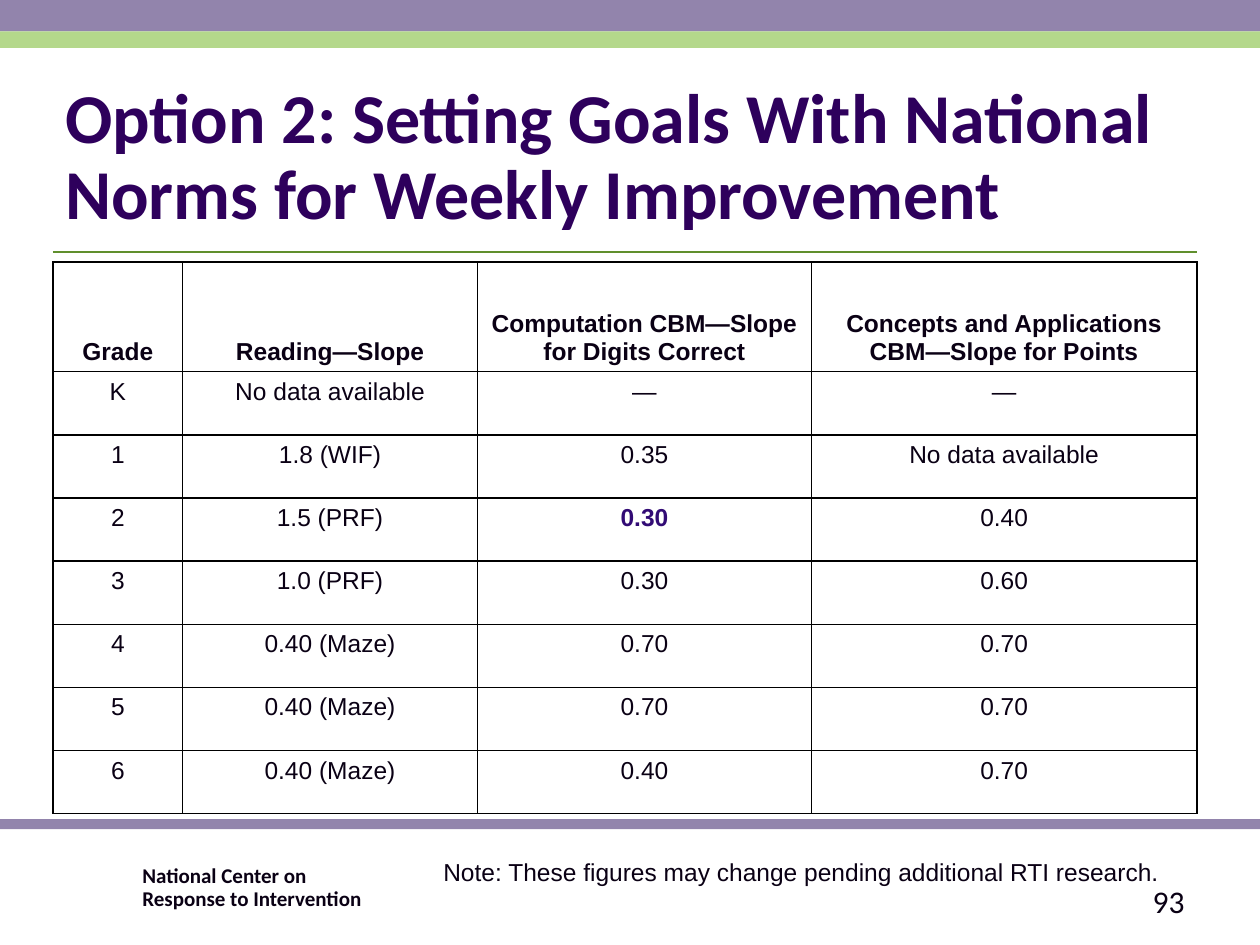
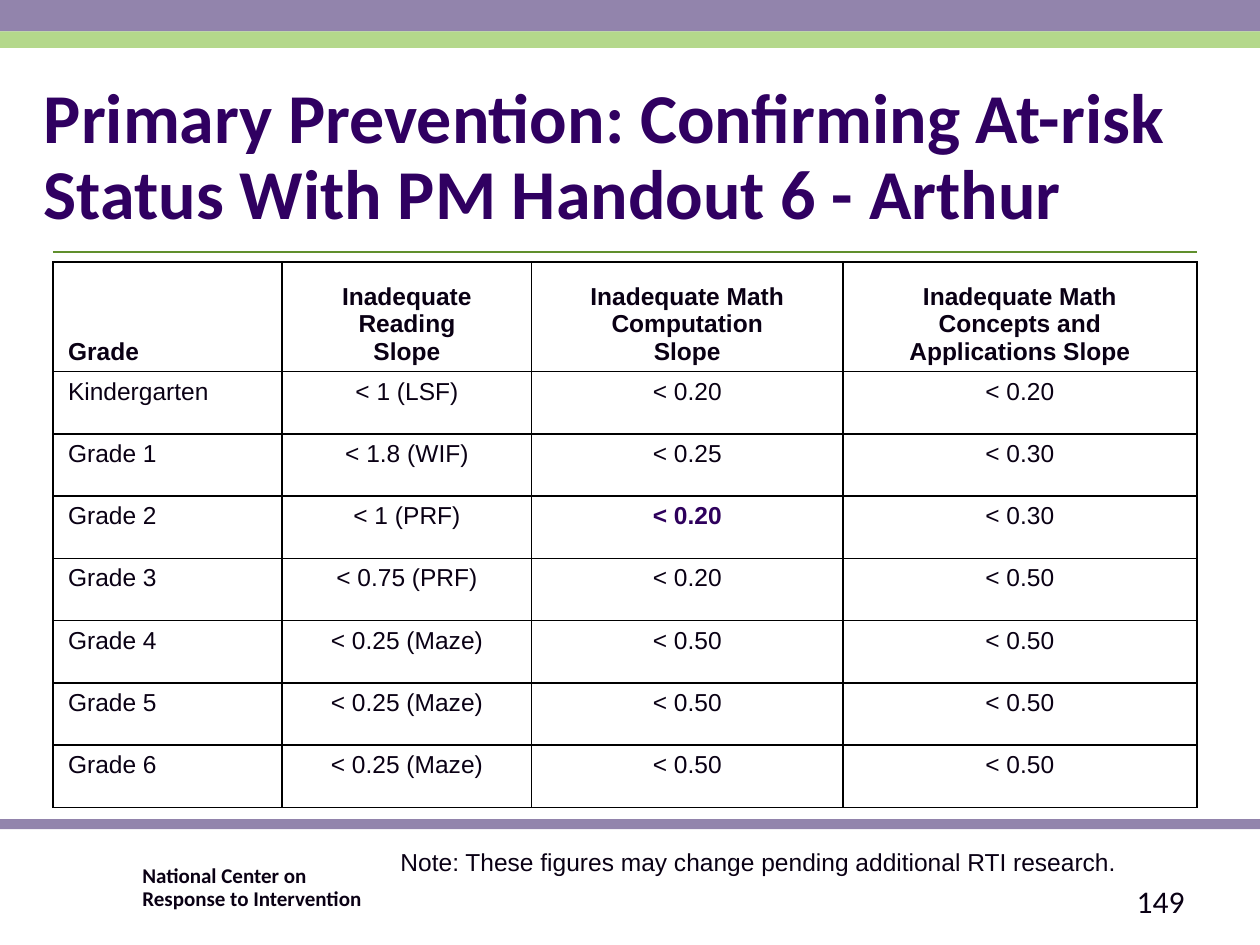
import lxml.etree
import pptx
import pptx.dml.color
import pptx.enum.shapes
import pptx.enum.text
import pptx.oxml.ns
import pptx.util

Inches, Pt = pptx.util.Inches, pptx.util.Pt
ALIGN, ANCHOR = pptx.enum.text.PP_ALIGN, pptx.enum.text.MSO_ANCHOR

INK, PURPLE, GREEN, RULE_GREEN = "0A0014", "9284AC", "B4D88B", "608F2D"
BORDER, PAPER = "000000", "FFFFFF"
HEAD_FONT, BODY_FONT = "Calibri", "Arial"

BANDS = [(0, 0.25, PURPLE), (0.25, 0.13, GREEN), (6.5, 0.08, PURPLE)]  # top, height, colour
FOOTER = "National Center on\vResponse to Intervention"
NOTE = "Note: These figures may change pending additional RTI research."
LEFT, RIGHT = 0.42, 9.5
TABLE_TOP, HEADER_HEIGHT = 2.08, 0.87

SLIDES = [
    {
        "title": "Option 2: Setting Goals With National Norms for Weekly Improvement",
        "title_span": (0.42, 9.08),
        "title_color": "2E005C",
        "headers": ["Grade", "Reading—Slope", "Computation CBM—Slope for Digits Correct",
                    "Concepts and Applications CBM—Slope for Points"],
        "rows": [
            ("K", "No data available", "—", "—"),
            ("1", "1.8 (WIF)", "0.35", "No data available"),
            ("2", "1.5 (PRF)", "0.30", "0.40"),
            ("3", "1.0 (PRF)", "0.30", "0.60"),
            ("4", "0.40 (Maze)", "0.70", "0.70"),
            ("5", "0.40 (Maze)", "0.70", "0.70"),
            ("6", "0.40 (Maze)", "0.40", "0.70"),
        ],
        "col_widths": [1.03, 2.34, 2.65, 3.06],
        "table_height": 4.38,
        "cell_margin": 0.11,
        "grade_align": ALIGN.CENTER,
        "highlight": (3, 2),
        "highlight_color": "320B75",
        "note_box": (3.42, 6.75, 7.83, 0.33),
        "number": "93",
    },
    {
        "title": "Primary Prevention: Confirming At-risk Status With PM Handout 6 - Arthur",
        "title_span": (0.25, 9.75),
        "title_color": "300061",
        "headers": ["Grade", "Inadequate\nReading\nSlope", "Inadequate Math\nComputation\nSlope",
                    "Inadequate Math\nConcepts and\nApplications Slope"],
        "rows": [
            ("Kindergarten", "< 1 (LSF)", "< 0.20", "< 0.20"),
            ("Grade 1", "< 1.8 (WIF)", "< 0.25", "< 0.30"),
            ("Grade 2", "< 1 (PRF)", "< 0.20", "< 0.30"),
            ("Grade 3", "< 0.75 (PRF)", "< 0.20", "< 0.50"),
            ("Grade 4", "< 0.25 (Maze)", "< 0.50", "< 0.50"),
            ("Grade 5", "< 0.25 (Maze)", "< 0.50", "< 0.50"),
            ("Grade 6", "< 0.25 (Maze)", "< 0.50", "< 0.50"),
        ],
        "col_widths": [1.82, 1.98, 2.47, 2.81],
        "table_height": 4.33,
        "cell_margin": 0.12,
        "grade_align": ALIGN.LEFT,
        "highlight": (3, 2),
        "highlight_color": "2E005C",
        "note_box": (3.08, 6.67, 7.67, 0.33),
        "number": "149",
    },
]


def rgb(color):
    return pptx.dml.color.RGBColor.from_string(color)


def style(paragraph, size, font=BODY_FONT, color=INK, bold=False, align=ALIGN.LEFT):
    paragraph.alignment = align
    paragraph.font.name = font
    paragraph.font.size = Pt(size)
    paragraph.font.bold = bold
    paragraph.font.color.rgb = rgb(color)


def add_text(slide, text, box, size, anchor=ANCHOR.TOP, margin=None, spacing=None, **look):
    frame = slide.shapes.add_textbox(*map(Inches, box)).text_frame
    frame.word_wrap = True
    frame.vertical_anchor = anchor
    if margin is not None:
        frame.margin_left = frame.margin_right = Inches(margin)
        frame.margin_top = frame.margin_bottom = Inches(margin)
    frame.text = text
    paragraph = frame.paragraphs[0]
    if spacing:
        paragraph.line_spacing = spacing
    style(paragraph, size, **look)


def add_frame(slide):
    """Add the bands, the rule under the title and the footer of every slide."""
    for top, height, color in BANDS:
        band = slide.shapes.add_shape(pptx.enum.shapes.MSO_SHAPE.RECTANGLE,
                                      0, Inches(top), Inches(10), Inches(height))
        band.shadow.inherit = False
        band.fill.solid()
        band.fill.fore_color.rgb = rgb(color)
        band.line.fill.background()
    rule = slide.shapes.add_connector(pptx.enum.shapes.MSO_CONNECTOR.STRAIGHT,
                                      Inches(LEFT), Inches(2), Inches(RIGHT), Inches(2))
    rule.line.color.rgb = rgb(RULE_GREEN)
    rule.line.width = Pt(0.75)
    lxml.etree.SubElement(rule._element.spPr, pptx.oxml.ns.qn("a:effectLst"))
    add_text(slide, FOOTER, (1.09, 6.83, 3.24, 0.3), 12, margin=0.04, spacing=0.9,
             font=HEAD_FONT, bold=True)


def add_borders(cell):
    qn = pptx.oxml.ns.qn
    properties = cell._tc.get_or_add_tcPr()
    for side in ("a:lnL", "a:lnR", "a:lnT", "a:lnB"):
        line = lxml.etree.SubElement(properties, qn(side), w=str(Pt(1)))
        fill = lxml.etree.SubElement(line, qn("a:solidFill"))
        lxml.etree.SubElement(fill, qn("a:srgbClr"), val=BORDER)


def add_norms_table(slide, content):
    rows = [content["headers"], *content["rows"]]
    widths = content["col_widths"]
    height = content["table_height"]
    table = slide.shapes.add_table(len(rows), len(widths), Inches(LEFT), Inches(TABLE_TOP),
                                   Inches(RIGHT - LEFT), Inches(height)).table
    for column, width in zip(table.columns, widths):
        column.width = Inches(width)
    grade_height = (height - HEADER_HEIGHT) / len(content["rows"])
    for r, values in enumerate(rows):
        table.rows[r].height = Inches(grade_height if r else HEADER_HEIGHT)
        for c, value in enumerate(values):
            cell = table.cell(r, c)
            add_borders(cell)
            cell.fill.solid()
            cell.fill.fore_color.rgb = rgb(PAPER)
            cell.margin_left = cell.margin_right = Inches(content["cell_margin"])
            cell.vertical_anchor = ANCHOR.TOP if r else ANCHOR.BOTTOM
            cell.text = value
            highlighted = (r, c) == content["highlight"]
            for paragraph in cell.text_frame.paragraphs:
                style(paragraph, 14, bold=r == 0 or highlighted,
                      color=content["highlight_color"] if highlighted else INK,
                      align=ALIGN.CENTER if c else content["grade_align"])


def main():
    deck = pptx.Presentation()
    deck.slide_width, deck.slide_height = Inches(10), Inches(7.5)
    for content in SLIDES:
        slide = deck.slides.add_slide(deck.slide_layouts[6])
        add_frame(slide)
        left, width = content["title_span"]
        add_text(slide, content["title"], (left, 0.83, width, 1.08), 40, anchor=ANCHOR.BOTTOM,
                 spacing=0.9, font=HEAD_FONT, color=content["title_color"], bold=True)
        add_norms_table(slide, content)
        add_text(slide, NOTE, content["note_box"], 14)
        add_text(slide, content["number"], (7.17, 6.95, 2.33, 0.4), 18, anchor=ANCHOR.MIDDLE,
                 font=HEAD_FONT, align=ALIGN.RIGHT)
    deck.save("out.pptx")


if __name__ == "__main__":
    main()
